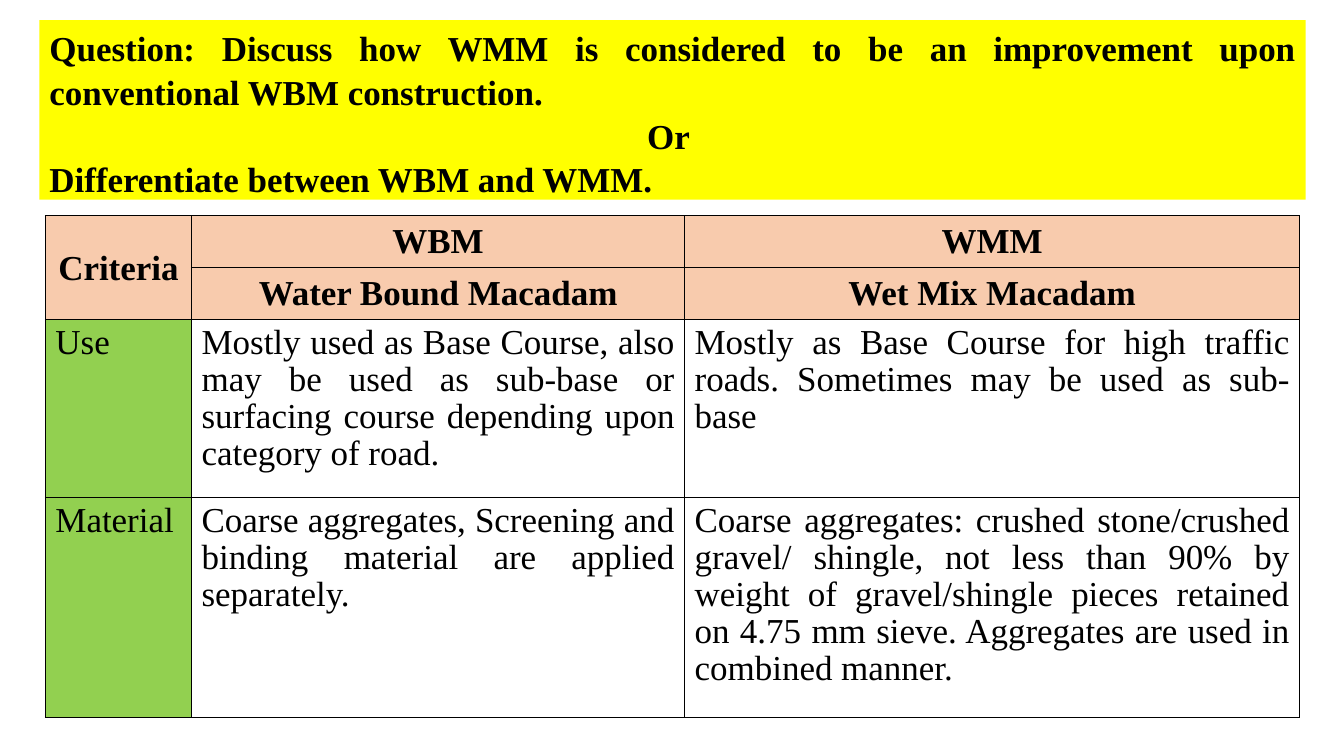
from dataclasses import dataclass

from lxml import etree
from pptx import Presentation
from pptx.dml.color import RGBColor
from pptx.enum.text import MSO_ANCHOR, MSO_AUTO_SIZE, PP_ALIGN
from pptx.oxml.ns import qn
from pptx.util import Inches, Pt

CENTER, JUSTIFY = PP_ALIGN.CENTER, PP_ALIGN.JUSTIFY
TOP, MIDDLE = MSO_ANCHOR.TOP, MSO_ANCHOR.MIDDLE
NO_AUTOFIT = MSO_AUTO_SIZE.NONE
TITLE_ONLY = 5


@dataclass(frozen=True)
class Theme:
    font: str = "Times New Roman"
    size: int = 25
    ink: str = "000000"
    question: str = "FFFF00"
    heading: str = "F8CBAD"
    criterion: str = "92D050"
    answer: str = "FFFFFF"
    border: int = 1
    heading_spacing: float = 1.04
    answer_spacing: float = 0.96


THEME = Theme()

# Grid of the comparison, in inches
TABLE_LEFT, TABLE_TOP = 0.45, 2.14
COLUMNS = (1.45, 4.89, 6.1)
ROWS = (0.515, 0.515, 1.765, 2.185)
HEADING_ROWS = 2

QUESTION = (
    ("Question: Discuss how WMM is considered to be an improvement upon "
     "conventional WBM construction.", JUSTIFY),
    ("Or ", CENTER),
    ("Differentiate between WBM and WMM.", JUSTIFY),
)
COMPARISON = (
    ("Criteria", "WBM", "WMM"),
    ("", "Water Bound Macadam", "Wet Mix Macadam"),
    ("Use",
     "Mostly used as Base Course, also may be used as sub-base or surfacing "
     "course depending upon category of road.",
     "Mostly as Base Course for high traffic roads. Sometimes may be used as "
     "sub-base"),
    ("Material",
     "Coarse aggregates, Screening and binding material are applied separately.",
     "Coarse aggregates: crushed stone/crushed gravel/ shingle, not less than "
     "90% by weight of gravel/shingle pieces retained on 4.75 mm sieve. "
     "Aggregates are used in combined manner."),
)


def paint(fill, color):
    fill.solid()
    fill.fore_color.rgb = RGBColor.from_string(color)


def format_paragraph(paragraph, alignment, bold, spacing):
    paragraph.alignment = alignment
    paragraph.line_spacing = spacing
    paragraph.space_before = paragraph.space_after = Pt(0)
    for run in paragraph.runs:
        run.font.name = THEME.font
        run.font.size = Pt(THEME.size)
        run.font.bold = bold
        run.font.color.rgb = RGBColor.from_string(THEME.ink)


def add_borders(cell):
    properties = cell._tc.get_or_add_tcPr()
    for position, side in enumerate(("a:lnL", "a:lnR", "a:lnT", "a:lnB")):
        line = etree.Element(qn(side), w=str(Pt(THEME.border)))
        solid = etree.SubElement(line, qn("a:solidFill"))
        etree.SubElement(solid, qn("a:srgbClr"), val=THEME.ink)
        properties.insert(position, line)


def place_question(slide):
    question = slide.shapes.title
    question.left, question.top = Inches(0.39), Inches(0.2)
    question.width, question.height = Inches(12.56), Inches(1.78)
    paint(question.fill, THEME.question)
    frame = question.text_frame
    frame.word_wrap = True
    frame.auto_size = NO_AUTOFIT
    frame.vertical_anchor = TOP
    frame.text = "\n".join(wording for wording, _ in QUESTION)
    for paragraph, (_, alignment) in zip(frame.paragraphs, QUESTION):
        format_paragraph(paragraph, alignment, True, THEME.heading_spacing)


def fill_cell(cell, wording, is_heading, is_criterion):
    cell.text_frame.text = wording
    if is_heading:
        color, alignment, spacing = THEME.heading, CENTER, THEME.heading_spacing
    else:
        color = THEME.criterion if is_criterion else THEME.answer
        alignment, spacing = JUSTIFY, THEME.answer_spacing
    cell.vertical_anchor = MIDDLE if is_heading and is_criterion else TOP
    format_paragraph(cell.text_frame.paragraphs[0], alignment, is_heading, spacing)
    paint(cell.fill, color)
    add_borders(cell)


def add_comparison(slide):
    table = slide.shapes.add_table(
        len(ROWS), len(COLUMNS), Inches(TABLE_LEFT), Inches(TABLE_TOP),
        Inches(sum(COLUMNS)), Inches(sum(ROWS))).table
    for column, width in zip(table.columns, COLUMNS):
        column.width = Inches(width)
    for row, height in zip(table.rows, ROWS):
        row.height = Inches(height)
    for r, entries in enumerate(COMPARISON):
        for c, wording in enumerate(entries):
            fill_cell(table.cell(r, c), wording, r < HEADING_ROWS, c == 0)
    # Criteria heading spans both heading rows
    table.cell(0, 0).merge(table.cell(HEADING_ROWS - 1, 0))


def main():
    deck = Presentation()
    deck.slide_width, deck.slide_height = Inches(13.33), Inches(7.5)
    slide = deck.slides.add_slide(deck.slide_layouts[TITLE_ONLY])
    place_question(slide)
    add_comparison(slide)
    deck.save("out.pptx")


if __name__ == "__main__":
    main()
